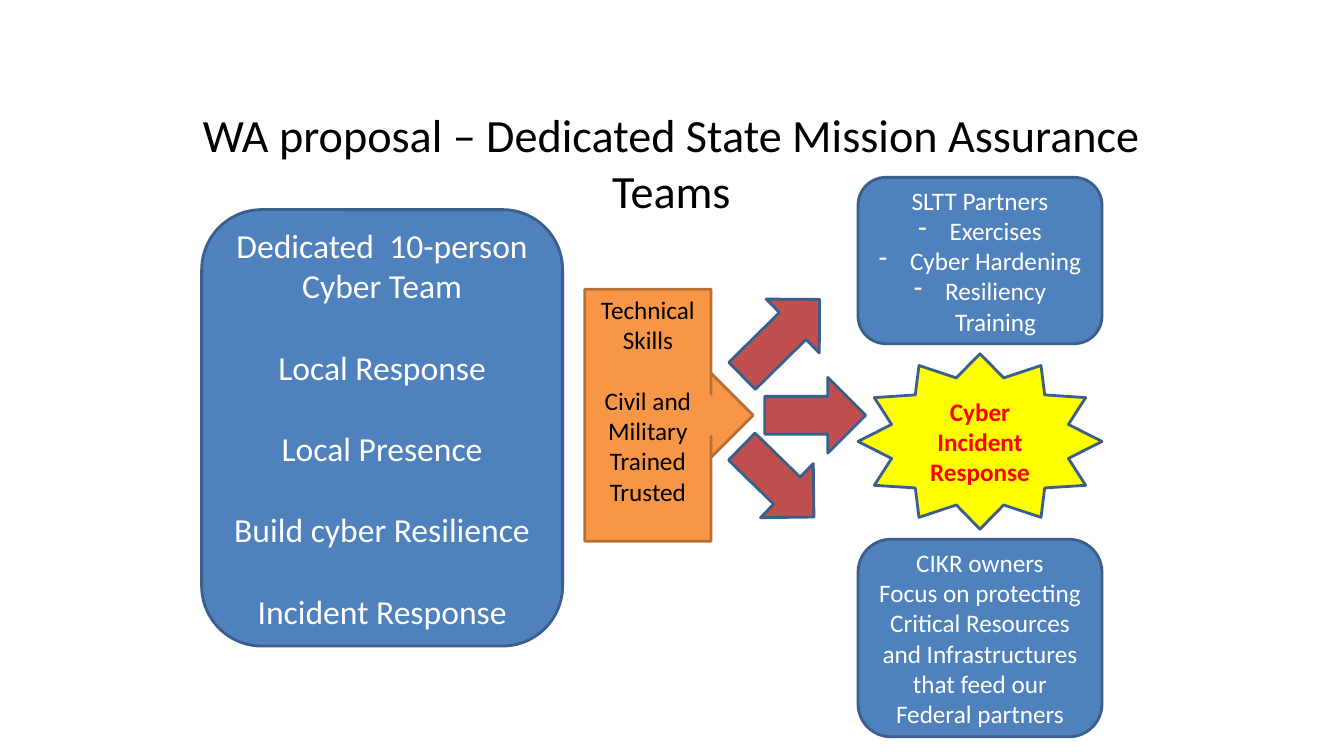
from dataclasses import dataclass

from lxml.etree import SubElement
from pptx import Presentation
from pptx.dml.color import RGBColor
from pptx.enum.shapes import MSO_SHAPE as Preset
from pptx.enum.text import MSO_ANCHOR as Anchor, PP_ALIGN as Align
from pptx.oxml.ns import qn
from pptx.util import Inches, Pt

BLUE, BLUE_EDGE = "4F81BD", "3A5F8C"
ORANGE, ORANGE_EDGE = "F79646", "B76F34"
RED, YELLOW = "C0504D", "FFFF00"
WHITE, BLACK, ALERT = "FFFFFF", "000000", "FF0000"
RIGHT_COLUMN, RIGHT_WIDTH = 8.51, 2.42
BULLET_INDENT = 0.31


@dataclass
class Line:
    words: str
    gap: float = 0
    bulleted: bool = False


@dataclass
class Block:
    preset: Preset
    left: float
    top: float
    width: float
    height: float
    fill: str
    edge: str = BLUE_EDGE
    rotation: float = 0
    lines: tuple[Line, ...] = ()
    size: float = 18
    ink: str = WHITE
    bold: bool = False
    bottom_inset: float = 0.05
    adjustments: tuple[float, ...] = ()


def color(value: str) -> RGBColor:
    return RGBColor.from_string(value)


def add_dash(paragraph) -> None:
    """Give the paragraph a hanging dash bullet."""
    properties = paragraph._p.get_or_add_pPr()
    properties.set("marL", str(Inches(BULLET_INDENT)))
    properties.set("indent", str(-Inches(BULLET_INDENT)))
    SubElement(properties, qn("a:buChar")).set("char", "-")


def write(frame, lines: tuple[Line, ...], size: float, ink: str, bold: bool = False) -> None:
    frame.word_wrap = True
    font_format = {"name": "Calibri", "size": Pt(size), "bold": bold}
    for index, line in enumerate(lines):
        paragraph = frame.add_paragraph() if index else frame.paragraphs[0]
        paragraph.alignment = Align.CENTER
        if line.gap:
            paragraph.space_before = Pt(line.gap)
        if line.bulleted:
            add_dash(paragraph)
        run = paragraph.add_run()
        run.text = line.words
        for attribute, value in font_format.items():
            setattr(run.font, attribute, value)
        run.font.color.rgb = color(ink)


def draw(slide, block: Block) -> None:
    shape = slide.shapes.add_shape(
        block.preset, Inches(block.left), Inches(block.top),
        Inches(block.width), Inches(block.height))
    shape.shadow.inherit = False
    shape.rotation = block.rotation
    for index, value in enumerate(block.adjustments):
        shape.adjustments[index] = value
    shape.fill.solid()
    shape.fill.fore_color.rgb = color(block.fill)
    shape.line.color.rgb = color(block.edge)
    shape.line.width = Pt(2)
    if block.lines:
        frame = shape.text_frame
        frame.vertical_anchor = Anchor.MIDDLE
        frame.margin_bottom = Inches(block.bottom_inset)
        write(frame, block.lines, block.size, block.ink, block.bold)


def add_title(slide, words: str) -> None:
    title = slide.shapes.add_textbox(Inches(1.66), Inches(1.01), Inches(10), Inches(0.75))
    title.text_frame.vertical_anchor = Anchor.TOP
    write(title.text_frame, (Line(words),), 33, BLACK)


TEAM_GAP, SKILLS_GAP = 29.3, 22
TEAM_ROLES = ("Local Response", "Local Presence", "Build cyber Resilience", "Incident Response")
PARTNER_SERVICES = ("Exercises", "Cyber Hardening", "Resiliency Training")

BLOCKS = (
    Block(Preset.ROUNDED_RECTANGLE, 2, 2.08, 3.58, 4.33, BLUE, size=24,
          lines=(Line("Dedicated  10-person Cyber Team"),
                 *(Line(role, gap=TEAM_GAP) for role in TEAM_ROLES))),
    Block(Preset.RIGHT_ARROW_CALLOUT, 5.8, 2.87, 1.67, 2.5, ORANGE, ORANGE_EDGE,
          ink=BLACK, bottom_inset=0.35, adjustments=(0.25, 0.25, 0.25, 0.829),
          lines=(Line("Technical Skills"),
                 Line("Civil and Military Trained", gap=SKILLS_GAP),
                 Line("Trusted"))),
    Block(Preset.UP_ARROW, 7.37, 2.81, 0.75, 1.08, RED, rotation=45.4),
    Block(Preset.UP_ARROW, 7.34, 4.28, 0.75, 1, RED, rotation=134.3),
    Block(Preset.ROUNDED_RECTANGLE, RIGHT_COLUMN, 1.76, RIGHT_WIDTH, 1.65, BLUE,
          lines=(Line("SLTT Partners"),
                 *(Line(service, bulleted=True) for service in PARTNER_SERVICES))),
    Block(Preset.ROUNDED_RECTANGLE, RIGHT_COLUMN, 5.35, RIGHT_WIDTH, 1.96, BLUE,
          lines=(Line("CIKR owners"),
                 Line("Focus on protecting Critical Resources and Infrastructures "
                      "that feed our Federal partners"))),
    Block(Preset.UP_ARROW, 7.71, 3.62, 0.75, 1, RED, rotation=90),
    Block(Preset.STAR_12_POINT, RIGHT_COLUMN, 3.51, RIGHT_WIDTH, 1.74, YELLOW,
          ink=ALERT, bold=True,
          lines=(Line("Cyber"), Line("Incident Response"))),
)


def main() -> None:
    deck = Presentation()
    deck.slide_width, deck.slide_height = Inches(13.33), Inches(7.5)
    slide = deck.slides.add_slide(deck.slide_layouts[6])
    add_title(slide, "WA proposal – Dedicated State Mission Assurance Teams")
    for block in BLOCKS:
        draw(slide, block)
    deck.save("out.pptx")


if __name__ == "__main__":
    main()
